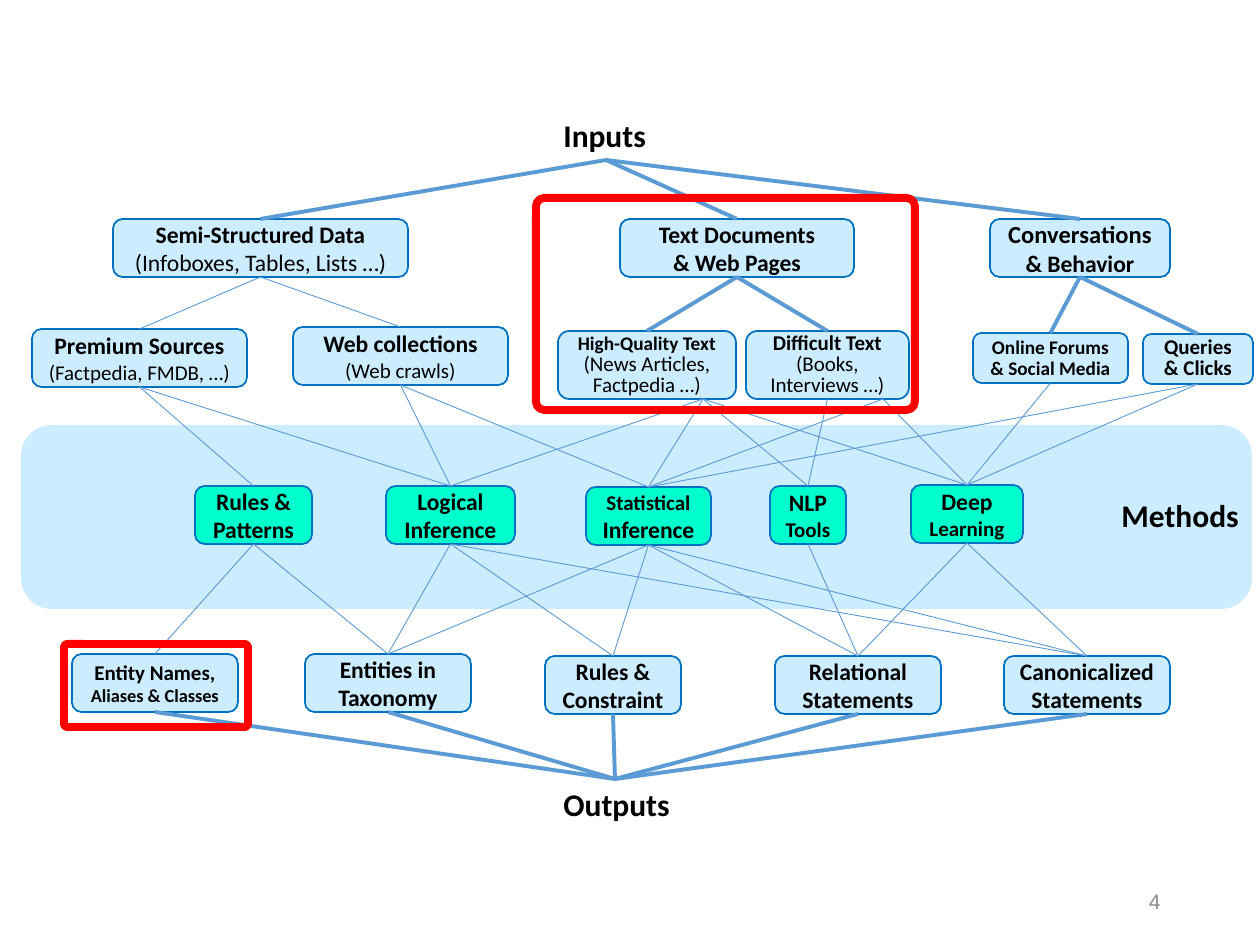
from lxml.etree import SubElement
from pptx import Presentation
from pptx.dml.color import RGBColor
from pptx.enum.shapes import MSO_CONNECTOR as CONN, MSO_SHAPE as SHAPE
from pptx.enum.text import MSO_ANCHOR as ANCHOR, PP_ALIGN as ALIGN
from pptx.oxml.ns import qn
from pptx.util import Emu, Pt

COLORS = {"pale": "CCECFF", "mint": "00FFCC", "border": "0070C0", "link": "5B9BD5",
          "frame": "FF0000", "text": "000000", "number": "8C8C8C"}
B, N = True, False  # bold, normal

# Content: name -> (left, top, width, height), lines of (text, size, bold)
DATA_BOXES = {
    "semi": ((113, 219, 295, 58), [("Semi-Structured Data", 13.5, B),
                                   ("(Infoboxes, Tables, Lists …)", 13.5, N)]),
    "docs": ((620, 219, 234, 58), [("Text Documents", 13.5, B), ("& Web Pages", 13.5, B)]),
    "behavior": ((990, 219, 180, 58), [("Conversations", 14, B), ("& Behavior", 13.5, B)]),
    "premium": ((32, 329, 215, 58), [("Premium Sources", 13.5, B),
                                     ("(Factpedia, FMDB, …)", 12, N)]),
    "web": ((293, 327, 215, 58), [("Web collections", 13.5, B), ("(Web crawls)", 12, N)]),
    "entity": ((72, 654, 166, 58), [("Entity Names,", 12, B), ("Aliases & Classes", 10.5, B)]),
    "taxonomy": ((305, 654, 166, 58), [("Entities in", 13.5, B), ("Taxonomy", 13.5, B)]),
    "constraint": ((545, 656, 136, 58), [("Rules &", 13.5, B), ("Constraint", 13.5, B)]),
    "relational": ((775, 656, 166, 58), [("Relational", 13.5, B), ("Statements", 13.5, B)]),
    "canonical": ((1004, 656, 166, 58), [("Canonicalized", 13.5, B), ("Statements", 13.5, B)]),
}
TIGHT_BOXES = {
    "quality": ((558, 331, 178, 68), [("High-Quality Text", 11, B),
                                      ("(News Articles,", 12, N), ("Factpedia …)", 12, N)]),
    "difficult": ((746, 331, 163, 68), [("Difficult Text", 12, B), ("(Books,", 12, N),
                                        ("Interviews …)", 12, N)]),
    "forums": ((973, 333, 155, 50), [("Online Forums", 11, B), ("& Social Media", 11, B)]),
    "queries": ((1143, 334, 110, 50), [("Queries", 12, B), ("& Clicks", 12, B)]),
}
METHOD_BOXES = {
    "rules": ((195, 486, 117, 58), [("Rules &", 13.5, B), ("Patterns", 13.5, B)]),
    "logical": ((386, 486, 129, 58), [("Logical", 13.5, B), ("Inference", 13.5, B)]),
    "statistical": ((586, 487, 125, 58), [("Statistical", 12, B), ("Inference", 13.5, B)]),
    "nlp": ((770, 486, 76, 58), [("NLP", 13.5, B), ("Tools", 12, B)]),
    "deep": ((911, 485, 112, 58), [("Deep", 13.5, B), ("Learning", 12, B)]),
}
LABELS = [("Inputs", (551, 110, 108, 50)), ("Outputs", (551, 779, 132, 50)),
          ("Methods", (1109, 490, 144, 50))]
FRAMES = [(536, 198, 379, 212), (64, 644, 184, 83)]

# Links: upper end -> lower ends
THICK_LINKS = {
    "inputs": ["semi", "docs", "behavior"],
    "docs": ["quality", "difficult"],
    "behavior": ["forums", "queries"],
    **{name: ["outputs"] for name in
       ("entity", "taxonomy", "constraint", "relational", "canonical")},
}
THIN_LINKS = {
    "semi": ["premium", "web"],
    "premium": ["rules", "logical"],
    "web": ["logical", "statistical"],
    "quality right": ["logical", "statistical", "nlp", "deep"],
    "difficult": ["nlp"],
    "difficult right": ["statistical", "deep"],
    "forums": ["deep"],
    "queries": ["statistical", "deep"],
    "rules": ["entity", "taxonomy"],
    "logical": ["taxonomy", "constraint", "canonical"],
    "statistical": ["taxonomy", "constraint", "relational", "canonical"],
    "nlp": ["relational"],
    "deep": ["relational", "canonical"],
}
# Link ends that are not the middle of a box edge
POINTS = {"inputs": (606, 160), "outputs": (615, 779),
          "quality right": (703, 399), "difficult right": (883, 399)}


def px(n):
    return Emu(round(n * 914400 / 126))


def rgb(name):
    return RGBColor.from_string(COLORS[name])


def style_run(r, size, bold, color="text", font="Calibri"):
    r.font.name, r.font.size, r.font.bold = font, Pt(size), bold
    r.font.color.rgb = rgb(color)


def add_round(s, rect, fill=None, line=None, width=1):
    sp = s.shapes.add_shape(SHAPE.ROUNDED_RECTANGLE, *map(px, rect))
    sp.shadow.inherit = False
    if fill:
        sp.fill.solid()
        sp.fill.fore_color.rgb = rgb(fill)
    else:
        sp.fill.background()
    if line:
        sp.line.color.rgb, sp.line.width = rgb(line), Pt(width)
    else:
        sp.line.fill.background()
    return sp


def add_box(s, rect, lines, fill, spacing=None):
    sp = add_round(s, rect, fill, "border")
    tf = sp.text_frame
    tf.word_wrap, tf.vertical_anchor = True, ANCHOR.MIDDLE
    tf.margin_left = tf.margin_right = px(6)
    tf.margin_top = tf.margin_bottom = 0
    tf.text = "\n".join(text for text, _, _ in lines)
    for p, (_, size, bold) in zip(tf.paragraphs, lines):
        p.alignment, p.line_spacing = ALIGN.CENTER, spacing
        style_run(p.runs[0], size, bold)
    return sp


def add_text(s, rect, text):
    tf = s.shapes.add_textbox(*map(px, rect)).text_frame
    tf.text = text
    return tf


def add_link(s, boxes, upper, lower, width):
    start, end = (POINTS.get(name, (0, 0)) for name in (upper, lower))
    c = s.shapes.add_connector(CONN.STRAIGHT, *map(px, start + end))
    if upper in boxes:
        c.begin_connect(boxes[upper], 2)  # bottom middle
    if lower in boxes:
        c.end_connect(boxes[lower], 0)  # top middle
    c.line.color.rgb, c.line.width = rgb("link"), Pt(width)
    SubElement(c._element.spPr, qn("a:effectLst"))


def main():
    prs = Presentation()
    prs.slide_width, prs.slide_height = px(1260), px(945)
    s = prs.slides.add_slide(prs.slide_layouts[6])

    # Methods band and level labels
    add_round(s, (21, 425, 1231, 184), "pale")
    for text, rect in LABELS:
        tf = add_text(s, rect, text)
        tf.word_wrap = False
        style_run(tf.paragraphs[0].runs[0], 18, True)

    # Boxes
    boxes = {}
    for group, fill, spacing in ((DATA_BOXES, "pale", None), (TIGHT_BOXES, "pale", Pt(12)),
                                 (METHOD_BOXES, "mint", None)):
        for name, (rect, lines) in group.items():
            boxes[name] = add_box(s, rect, lines, fill, spacing)

    # Links
    for links, width in ((THICK_LINKS, 2.25), (THIN_LINKS, 0.5)):
        for upper, lowers in links.items():
            for lower in lowers:
                add_link(s, boxes, upper, lower, width)

    # Slide number
    tf = add_text(s, (890, 876, 283, 50), "4")
    tf.word_wrap, tf.vertical_anchor = True, ANCHOR.MIDDLE
    tf.paragraphs[0].alignment = ALIGN.RIGHT
    style_run(tf.paragraphs[0].runs[0], 12, False, "number", "Arial")

    # Red highlight frames
    for rect in FRAMES:
        add_round(s, rect, line="frame", width=4.5).adjustments[0] = 0.04

    prs.save("out.pptx")


if __name__ == "__main__":
    main()
